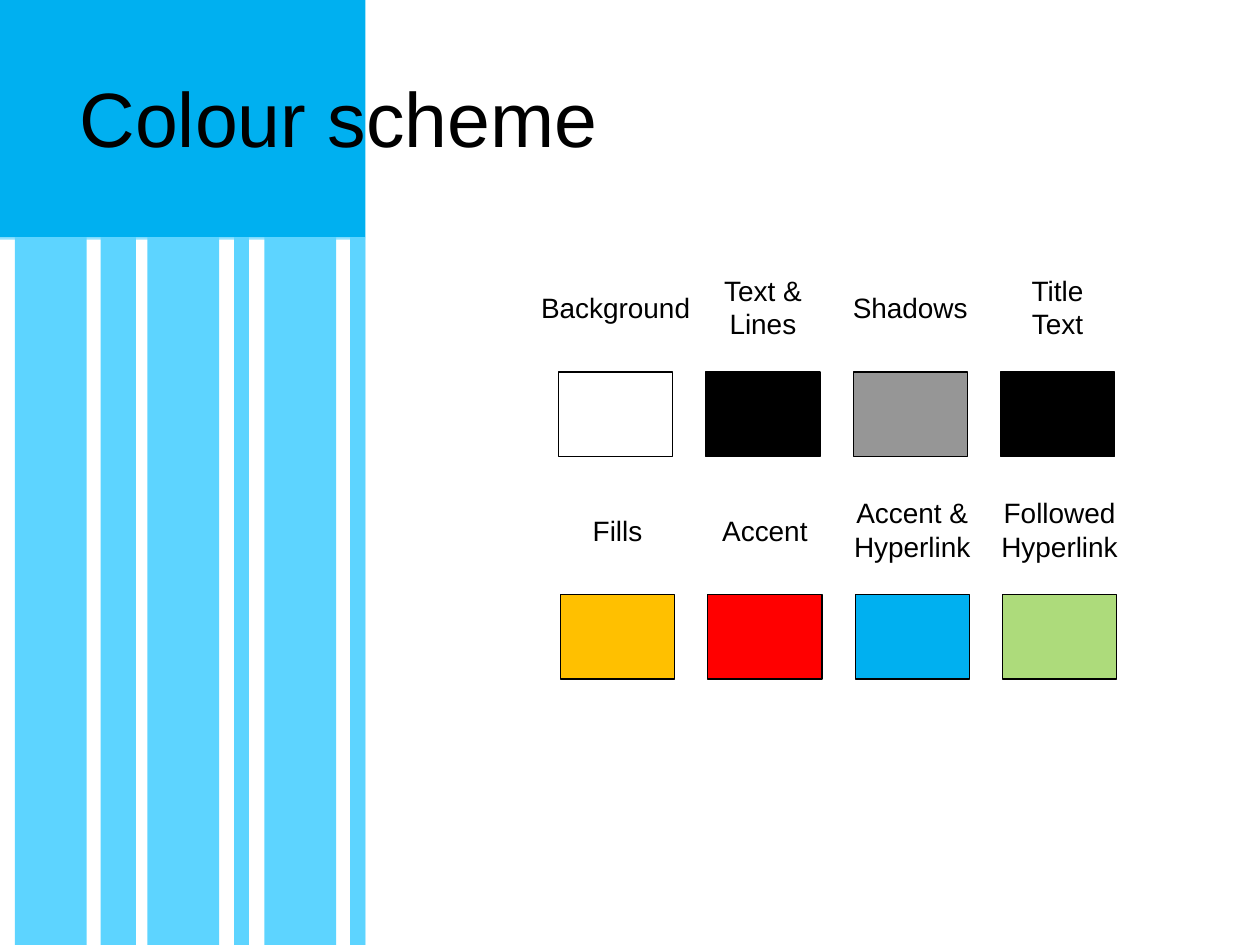
from dataclasses import dataclass

from pptx import Presentation
from pptx.dml.color import RGBColor as Rgb
from pptx.enum.shapes import MSO_SHAPE as Kind
from pptx.enum.text import MSO_ANCHOR as Anchor, MSO_AUTO_SIZE as Fit, PP_ALIGN as Align
from pptx.util import Cm, Pt


@dataclass(frozen=True)
class Theme:
    font: str = "Arial"
    title: int = 44
    label: int = 16
    line: float = 0.75
    ink: str = "000000"
    paper: str = "FFFFFF"
    head: str = "00B0F0"
    edge: str = "93E2FF"
    stripe: str = "5DD4FF"


@dataclass(frozen=True)
class Box:
    left: float
    top: float
    width: float
    height: float

    def spans(self) -> tuple:
        return Cm(self.left), Cm(self.top), Cm(self.width), Cm(self.height)


@dataclass(frozen=True)
class Swatch:
    label: str  # "\n" starts a paragraph, "\v" breaks a line
    fill: str


@dataclass(frozen=True)
class Row:
    left: float
    top: float
    items: tuple


THEME = Theme()
WIDE, HIGH = 25.4, 19.05  # slide, cm
BAND, HEAD = 7.37, 4.78  # side band width, head height
STRIPES = ((0.3, 1.45), (2.03, 0.71), (2.97, 1.45),
           (4.72, 0.3), (5.33, 1.45), (7.06, 0.31))  # left, width
PITCH, CHIP_W, CHIP_H = 2.97, 2.3, 1.7
RISE = 1.3  # from label middle to swatch top
LABEL_W = 3.6  # holds the longest label on one line
PAD, LEAD = 0.25, 0.69  # label margins and line height
ROWS = (
    Row(11.26, 7.5, (
        Swatch("Background", "FFFFFF"),
        Swatch("Text &\nLines", "000000"),
        Swatch("Shadows", "969696"),
        Swatch("Title\vText", "000000"),
    )),
    Row(11.3, 11.99, (
        Swatch("Fills", "FFC000"),
        Swatch("Accent", "FF0000"),
        Swatch("Accent &\nHyperlink", "00B0F0"),
        Swatch("Followed\nHyperlink", "ADDB7B"),
    )),
)


def style(frame, size: int, align: Align) -> None:
    for para in frame.paragraphs:
        para.alignment = align
        for run in para.runs:
            run.font.name = THEME.font
            run.font.size = Pt(size)
            run.font.color.rgb = Rgb.from_string(THEME.ink)


def draw_rect(slide, box: Box, fill: str, lined: bool = False) -> None:
    rect = slide.shapes.add_shape(Kind.RECTANGLE, *box.spans())
    rect.shadow.inherit = False
    rect.fill.solid()
    rect.fill.fore_color.rgb = Rgb.from_string(fill)
    if lined:
        rect.line.color.rgb = Rgb.from_string(THEME.ink)
        rect.line.width = Pt(THEME.line)
    else:
        rect.line.fill.background()


def draw_label(slide, text: str, mid: float, level: float) -> None:
    lines = len(text.splitlines())
    high = PAD + LEAD * lines
    box = Box(mid - LABEL_W / 2, level - high / 2, LABEL_W, high)
    frame = slide.shapes.add_textbox(*box.spans()).text_frame
    frame.word_wrap = False
    frame.auto_size = Fit.SHAPE_TO_FIT_TEXT
    frame.text = text
    style(frame, THEME.label, Align.CENTER)


def draw_band(slide) -> None:
    draw_rect(slide, Box(0, HEAD, BAND, HIGH - HEAD), THEME.edge)
    draw_rect(slide, Box(0, 0, BAND, HEAD), THEME.head)
    draw_rect(slide, Box(0, HEAD + 0.05, BAND, HIGH - HEAD - 0.05), THEME.paper)
    for left, width in STRIPES:
        draw_rect(slide, Box(left, HEAD, width, HIGH - HEAD), THEME.stripe)


def draw_title(slide, text: str, box: Box) -> None:
    title = slide.shapes.title
    title.left, title.top, title.width, title.height = box.spans()
    frame = title.text_frame
    frame.text = text
    frame.vertical_anchor = Anchor.MIDDLE
    style(frame, THEME.title, Align.LEFT)
    # Bring the title in front of the band
    slide.shapes._spTree.append(title._element)


def draw_row(slide, row: Row) -> None:
    for col, item in enumerate(row.items):
        left = row.left + col * PITCH
        draw_rect(slide, Box(left, row.top, CHIP_W, CHIP_H), item.fill, lined=True)
        draw_label(slide, item.label, left + CHIP_W / 2, row.top - RISE)


def main() -> None:
    deck = Presentation()
    deck.slide_width, deck.slide_height = Cm(WIDE), Cm(HIGH)
    slide = deck.slides.add_slide(deck.slide_layouts[5])

    # Side band and title
    draw_band(slide)
    draw_title(slide, "Colour scheme", Box(1.35, 0.76, 22.78, 3.18))

    # Swatches with their labels
    for row in ROWS:
        draw_row(slide, row)

    deck.save("out.pptx")


if __name__ == "__main__":
    main()
